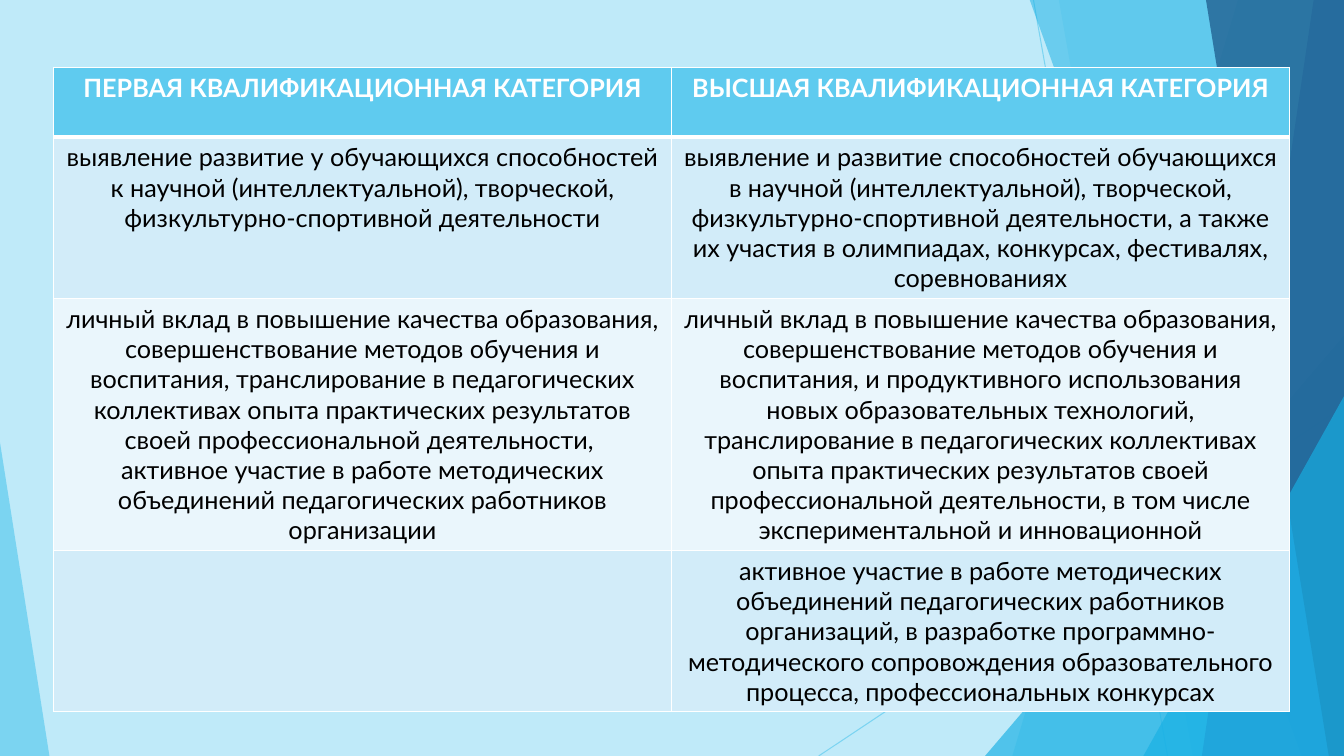
from lxml.etree import SubElement
from pptx import Presentation
from pptx.dml.color import RGBColor
from pptx.enum.shapes import MSO_CONNECTOR, MSO_SHAPE
from pptx.enum.text import PP_ALIGN
from pptx.oxml import parse_xml
from pptx.oxml.ns import nsdecls, qn
from pptx.util import Inches, Pt

COLORS = {
    "background": "BFEAF9", "sky": "5FCBEF", "azure": "17B0E4",
    "blue": "2E83C3", "navy": "226292", "white": "FFFFFF",
    "black": "000000", "band": "D2ECF9", "light_band": "EAF6FC",
}
WIDTH, HEIGHT = 13.33, 7.5
PANEL_TOP = -0.01

RAYS = [((10.25, 0), (11.58, HEIGHT)), ((WIDTH, 4.03), (8.12, HEIGHT))]
BACKDROP = [
    ("panel", {"top_x": 12.28, "bottom_x": 10.04}, "sky", 36),
    ("panel", {"top_x": 10.5, "bottom_x": 11.83}, "sky", 20),
    ("triangle", {"left": 9.77, "top": 3.33, "width": 3.56, "apex": 1}, "azure", 66),
    ("panel", {"top_x": 10.21, "bottom_x": 12.91}, "azure", 50),
    ("panel", {"top_x": 13.03, "bottom_x": 11.92}, "blue", 70),
    ("panel", {"top_x": 11.96, "bottom_x": 13.18}, "navy", 80),
    ("triangle", {"left": 11.34, "top": 3.93, "width": 1.99, "apex": 1}, "azure", 66),
    ("triangle", {"left": 0, "top": 4.39, "width": 0.49, "apex": 0}, "sky", 70),
]

ROW_FILLS = ["sky", "band", "light_band", "band"]
CATEGORY_ROWS = [
    (["ПЕРВАЯ КВАЛИФИКАЦИОННАЯ КАТЕГОРИЯ"],
     ["ВЫСШАЯ КВАЛИФИКАЦИОННАЯ КАТЕГОРИЯ"]),
    (["выявление развитие у обучающихся способностей к научной (интеллектуальной), "
      "творческой, физкультурно-спортивной деятельности"],
     ["выявление и развитие способностей обучающихся в научной (интеллектуальной), "
      "творческой, физкультурно-спортивной деятельности, а также их участия в "
      "олимпиадах, конкурсах, фестивалях, соревнованиях"]),
    (["личный вклад в повышение качества образования, совершенствование методов "
      "обучения и воспитания, транслирование в педагогических коллективах опыта "
      "практических результатов своей профессиональной деятельности, ",
      "активное участие в работе методических объединений педагогических "
      "работников организации"],
     ["личный вклад в повышение качества образования, совершенствование методов "
      "обучения и воспитания, и продуктивного использования новых образовательных "
      "технологий, транслирование в педагогических коллективах опыта практических "
      "результатов своей профессиональной деятельности, в том числе "
      "экспериментальной и инновационной"]),
    ([],
     ["активное участие в работе методических объединений педагогических работников "
      "организаций, в разработке программно-методического сопровождения "
      "образовательного процесса, профессиональных конкурсах"]),
]
TABLES = [
    {"left": 0.74, "top": 2.36, "column_width": 4.7,
     "heights": [0.41] * 4, "rows": [([], [])] * 4},
    {"left": 0.53, "top": 0.67, "column_width": 6.13,
     "heights": [0.69, 1.6, 2.5, 1.6], "rows": CATEGORY_ROWS},
]


def paint(fill, color, opacity=100):
    fill.solid()
    fill.fore_color.rgb = RGBColor.from_string(COLORS[color])
    if opacity < 100:
        for node in fill._xPr.iter(qn("a:srgbClr")):
            SubElement(node, qn("a:alpha"), val=str(opacity * 1000))


def add_ray(slide, start, end):
    ends = [Inches(value) for value in (*start, *end)]
    ray = slide.shapes.add_connector(MSO_CONNECTOR.STRAIGHT, *ends)
    paint(ray.line.fill, "sky", 70)
    ray.line.width = Pt(0.75)
    SubElement(ray._element.spPr, qn("a:effectLst"))


def add_panel(slide, top_x, bottom_x):
    points = [(top_x, PANEL_TOP), (WIDTH, PANEL_TOP), (WIDTH, HEIGHT), (bottom_x, HEIGHT)]
    corners = [(Inches(x), Inches(y)) for x, y in points]
    builder = slide.shapes.build_freeform(*corners[0])
    builder.add_line_segments(corners[1:], close=True)
    return builder.convert_to_shape()


def add_triangle(slide, left, top, width, apex):
    box = [Inches(value) for value in (left, top, width, HEIGHT - top)]
    triangle = slide.shapes.add_shape(MSO_SHAPE.ISOSCELES_TRIANGLE, *box)
    triangle.adjustments[0] = apex
    return triangle


def write_text(frame, lines, size=18, color="black", bold=False):
    for index, line in enumerate(lines):
        paragraph = frame.add_paragraph() if index else frame.paragraphs[0]
        paragraph.alignment = PP_ALIGN.CENTER
        run = paragraph.add_run()
        run.text = line
        run.font.name = "Lato"
        run.font.size = Pt(size)
        run.font.bold = bold
        run.font.color.rgb = RGBColor.from_string(COLORS[color])


def set_borders(cell, widths):
    properties = cell._tc.get_or_add_tcPr()
    for index, (side, width) in enumerate(widths.items()):
        properties.insert(index, parse_xml(
            f'<a:ln{side} {nsdecls("a")} w="{Pt(width)}"><a:solidFill>'
            f'<a:srgbClr val="{COLORS["white"]}"/></a:solidFill></a:ln{side}>'))


def add_banded_table(slide, left, top, column_width, heights, rows):
    box = [Inches(value) for value in (left, top, 2 * column_width, sum(heights))]
    table = slide.shapes.add_table(len(rows), 2, *box).table
    for column in table.columns:
        column.width = Inches(column_width)
    for index, (row, texts, height) in enumerate(zip(table.rows, rows, heights)):
        header = index == 0
        row.height = Inches(height)
        for cell, lines in zip(row.cells, texts):
            paint(cell.fill, ROW_FILLS[index])
            set_borders(cell, {"L": 1, "R": 1, "T": 3 if index == 1 else 1,
                               "B": 3 if header else 1})
            write_text(cell.text_frame, lines, bold=header,
                       color="white" if header else "black")


def main():
    """Build the slide comparing the two qualification categories."""
    presentation = Presentation()
    presentation.slide_width, presentation.slide_height = Inches(WIDTH), Inches(HEIGHT)
    slide = presentation.slides.add_slide(presentation.slide_layouts[6])
    paint(slide.background.fill, "background")
    for start, end in RAYS:
        add_ray(slide, start, end)
    builders = {"panel": add_panel, "triangle": add_triangle}
    for kind, geometry, color, opacity in BACKDROP:
        shape = builders[kind](slide, **geometry)
        paint(shape.fill, color, opacity)
        shape.line.fill.background()
        shape.shadow.inherit = False
    for table in TABLES:
        add_banded_table(slide, **table)
    presentation.save("out.pptx")


if __name__ == "__main__":
    main()
